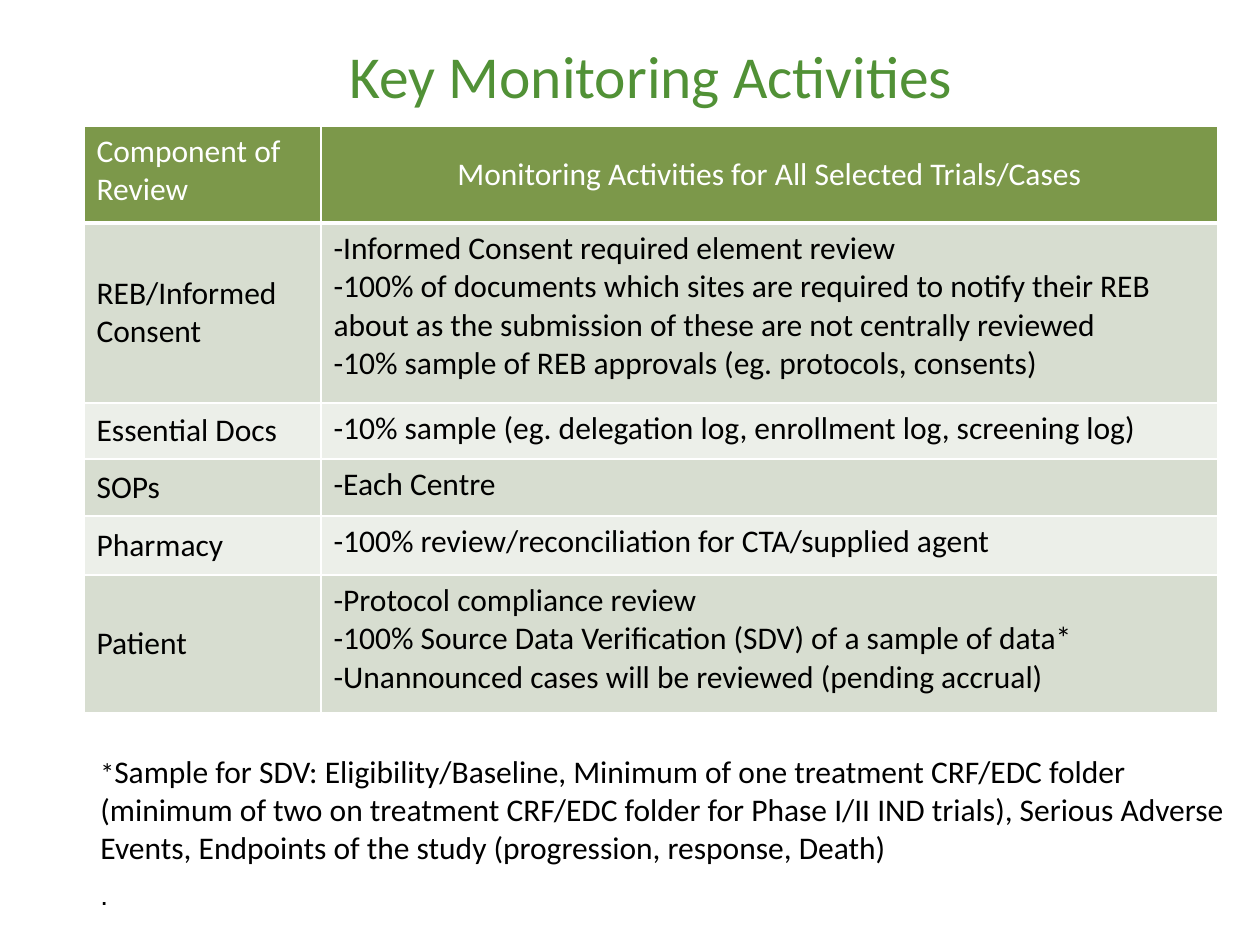
"""Build the slide on key monitoring activities."""
import dataclasses
import lxml.etree
import pptx
import pptx.dml.color
import pptx.enum.text
import pptx.oxml.ns
import pptx.util

ANCHOR = pptx.enum.text.MSO_ANCHOR
ALIGN = pptx.enum.text.PP_ALIGN


@dataclasses.dataclass(frozen=True)
class Theme:
    """Colours, fonts and type sizes."""
    title: str = "519136"
    head: str = "7C984A"
    bands: tuple = ("D7DDD0", "ECEFE9")
    white: str = "FFFFFF"
    black: str = "000000"
    font: str = "Calibri"
    plain: str = "Arial"
    large: int = 34
    body: int = 18
    small: int = 16


def px(count):
    """Turn pixels into EMU."""
    return round(count * 914400 / 126)


class Deck:
    """Hold the theme and the current slide."""

    def __init__(self, theme):
        """Open a deck with one title-only slide."""
        self.theme = theme
        self.file = pptx.Presentation()
        self.file.slide_width, self.file.slide_height = px(1260), px(945)
        self.slide = self.file.slides.add_slide(self.file.slide_layouts[5])

    def style(self, font, size, color, face=None):
        """Set the look of a font."""
        font.name, font.size = face or self.theme.font, pptx.util.Pt(size)
        font.bold = False
        font.color.rgb = pptx.dml.color.RGBColor.from_string(color)

    def title(self, text, left, top, width, height):
        """Place and format the title."""
        box = self.slide.shapes.title
        box.left, box.top, box.width, box.height = map(px, (left, top, width, height))
        frame = box.text_frame
        frame.text = text
        frame.vertical_anchor = ANCHOR.MIDDLE
        para = frame.paragraphs[0]
        para.alignment = ALIGN.CENTER
        self.style(para.font, self.theme.large, self.theme.title)

    def border(self, cell, base):
        """Draw white lines round a cell, with the given bottom width."""
        props = cell._tc.get_or_add_tcPr()
        for side, width in (("L", 1), ("R", 1), ("T", 1), ("B", base)):
            line = lxml.etree.SubElement(props, pptx.oxml.ns.qn(f"a:ln{side}"),
                                         w=str(pptx.util.Pt(width)))
            fill = lxml.etree.SubElement(line, pptx.oxml.ns.qn("a:solidFill"))
            lxml.etree.SubElement(fill, pptx.oxml.ns.qn("a:srgbClr"), val=self.theme.white)

    def cell(self, cell, text, fill, color, middle, align):
        """Fill and format one table cell."""
        head = fill == self.theme.head
        self.border(cell, 3 if head else 1)
        cell.fill.solid()
        cell.fill.fore_color.rgb = pptx.dml.color.RGBColor.from_string(fill)
        cell.vertical_anchor = ANCHOR.MIDDLE if middle else ANCHOR.TOP
        cell.text = text
        for para in cell.text_frame.paragraphs:
            para.alignment = align
            self.style(para.font, self.theme.body, color)

    def table(self, rows, left, top, widths, heights):
        """Add a table with a header and banded rows."""
        grid = self.slide.shapes.add_table(
            len(rows), len(widths), px(left), px(top),
            px(sum(widths)), px(sum(heights))).table
        for col, width in zip(grid.columns, widths):
            col.width = px(width)
        for i, (row, height) in enumerate(zip(rows, heights)):
            grid.rows[i].height = px(height)
            head = i == 0
            fill = self.theme.head if head else self.theme.bands[(i - 1) % 2]
            color = self.theme.white if head else self.theme.black
            for j, text in enumerate(row):
                align = ALIGN.CENTER if head and j else ALIGN.LEFT
                self.cell(grid.cell(i, j), text, fill, color, head == bool(j), align)

    def note(self, mark, text, end, left, top, width, height):
        """Add the footnote and its closing line."""
        look = self.theme
        frame = self.slide.shapes.add_textbox(*map(px, (left, top, width, height))).text_frame
        frame.word_wrap = True
        frame.auto_size = pptx.enum.text.MSO_AUTO_SIZE.SHAPE_TO_FIT_TEXT
        para = frame.paragraphs[0]
        for part, size in ((mark, look.small), (text, look.body)):
            run = para.add_run()
            run.text = part
            self.style(run.font, size, look.black)
        last = frame.add_paragraph()
        last.text = end
        last.line_spacing = 0.95
        last.space_before = pptx.util.Pt(8)
        self.style(last.font, look.small, look.black, look.plain)


ROWS = (
    ("Component of Review", "Monitoring Activities for All Selected Trials/Cases"),
    ("REB/Informed Consent",
     "-Informed Consent required element review\n"
     "-100% of documents which sites are required to notify their REB "
     "about as the submission of these are not centrally reviewed\n"
     "-10% sample of REB approvals (eg. protocols, consents)"),
    ("Essential Docs", "-10% sample (eg. delegation log, enrollment log, screening log)"),
    ("SOPs", "-Each Centre"),
    ("Pharmacy", "-100% review/reconciliation for CTA/supplied agent"),
    ("Patient",
     "-Protocol compliance review\n"
     "-100% Source Data Verification (SDV) of a sample of data*\n"
     "-Unannounced cases will be reviewed (pending accrual)"),
)
NOTE = ("Sample for SDV: Eligibility/Baseline, Minimum of one treatment CRF/EDC folder "
        "(minimum of two on treatment CRF/EDC folder for Phase I/II IND trials), "
        "Serious Adverse Events, Endpoints of the study (progression, response, Death)")


def main():
    """Build and save the slide."""
    deck = Deck(Theme())
    deck.title("Key Monitoring Activities", 84, 21, 1134, 108)
    deck.table(ROWS, 84, 126, (237, 897), (97, 180, 56, 57, 59, 138))
    deck.note("*", NOTE, ".", 88, 746, 1155, 176)
    deck.file.save("out.pptx")


if __name__ == "__main__":
    main()
